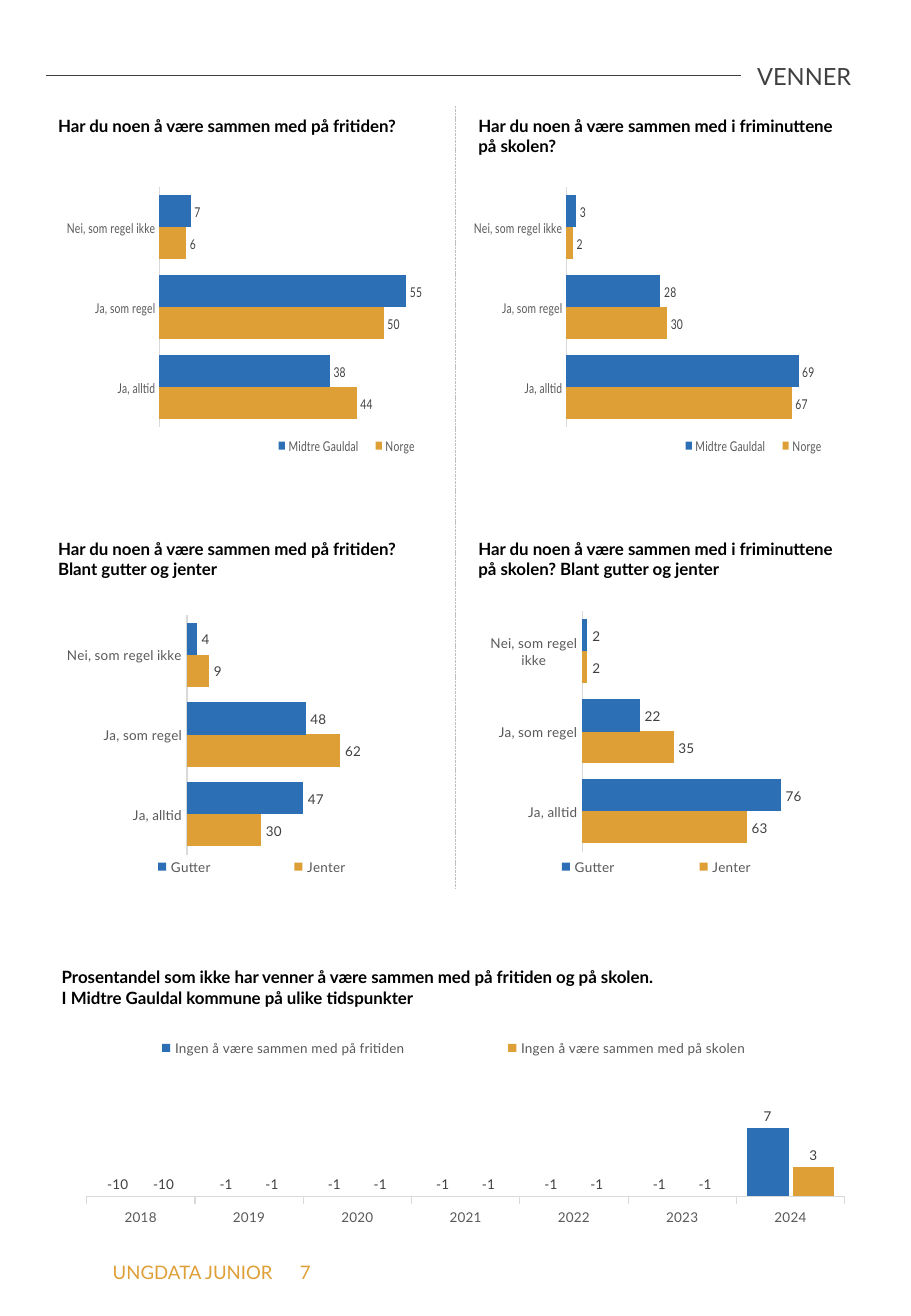
from dataclasses import dataclass

from lxml import etree
from pptx import Presentation
from pptx.chart.data import CategoryChartData
from pptx.dml.color import RGBColor
from pptx.enum import chart as chart_enum, dml, shapes, text
from pptx.oxml import ns
from pptx.util import Pt

EMU_PER_PX = 9144  # 100 px to the inch
FONT = "Lato"
COLORS = {
    "blue": "2C6FB4", "amber": "DE9F37", "black": "000000", "dark": "404040",
    "grey": "595959", "dotted": "BFBFBF", "axis": "D9D9D9",
}
ANSWERS = ("Ja, alltid", "Ja, som regel", "Nei, som regel ikke")
YEARS = tuple(str(year) for year in range(2018, 2025))
Box = tuple[int, int, int, int]
Layout = tuple[float, float, float, float]


@dataclass
class Series:
    name: str
    color: str
    values: tuple[int, ...]


@dataclass
class Panel:
    heading: tuple[str, ...]
    heading_box: Box
    chart_box: Box
    series: tuple[Series, Series]
    axis_max: float
    plot_layout: Layout
    legend_layout: Layout
    categories: tuple[str, ...] = ANSWERS
    upright: bool = False


@dataclass
class Rule:
    start: tuple[int, int]
    end: tuple[int, int]
    color: str
    width: float
    dash: dml.MSO_LINE = dml.MSO_LINE.SOLID


PANELS = (
    Panel(("Har du noen å være sammen med på fritiden?",),
          (38, 90, 315, 27), (55, 137, 298, 247),
          (Series("Norge", "amber", (44, 50, 6)),
           Series("Midtre Gauldal", "blue", (38, 55, 7))),
          60, (0.43, 0.07, 0.97, 0.8), (0.41, 0.88, 0.97, 0.1)),
    Panel(("Har du noen å være sammen med i friminuttene på skolen?",),
          (384, 90, 329, 44), (390, 137, 298, 247),
          (Series("Norge", "amber", (67, 30, 2)),
           Series("Midtre Gauldal", "blue", (69, 28, 3))),
          80, (0.43, 0.07, 0.97, 0.8), (0.41, 0.88, 0.97, 0.1)),
    Panel(("Har du noen å være sammen med på fritiden? Blant gutter og jenter",),
          (38, 438, 315, 44), (55, 486, 298, 247),
          (Series("Jenter", "amber", (30, 62, 9)),
           Series("Gutter", "blue", (47, 48, 4))),
          70, (0.33, 0.08, 0.48, 0.8), (0.03, 0.87, 0.96, 0.1)),
    Panel(("Har du noen å være sammen med i friminuttene på skolen? Blant gutter og jenter",),
          (384, 438, 315, 61), (390, 486, 298, 247),
          (Series("Jenter", "amber", (63, 35, 2)),
           Series("Gutter", "blue", (76, 22, 2))),
          90, (0.3, 0.07, 0.65, 0.8), (0.02, 0.87, 0.97, 0.1)),
    Panel(("Prosentandel som ikke har venner å være sammen med på fritiden og på skolen.",
           "I Midtre Gauldal kommune på ulike tidspunkter"),
          (41, 791, 642, 44), (52, 847, 644, 162),
          (Series("Ingen å være sammen med på fritiden", "blue", (-10, -1, -1, -1, -1, -1, 7)),
           Series("Ingen å være sammen med på skolen", "amber", (-10, -1, -1, -1, -1, -1, 3))),
          7.5, (0.03, 0.48, 0.97, 0.37), (0, 0.02, 1, 0.15), YEARS, True),
)
RULES = (
    Rule((375, 87), (375, 731), "dotted", 0.5, dml.MSO_LINE.SQUARE_DOT),
    Rule((38, 62), (610, 62), "dark", 0.3),
)


def px(length: int) -> int:
    return length * EMU_PER_PX


def rgb(name: str) -> RGBColor:
    return RGBColor.from_string(COLORS[name])


def style_font(font, size: float, color: str, bold: bool = False) -> None:
    font.name, font.size, font.bold = FONT, Pt(size), bold
    font.color.rgb = rgb(color)


def add_tabs(paragraph, stops: tuple[int, ...]) -> None:
    tab_list = etree.SubElement(paragraph._p.get_or_add_pPr(), ns.qn("a:tabLst"))
    for stop in stops:
        etree.SubElement(tab_list, ns.qn("a:tab"), pos=str(px(stop)), algn="l")


def write_text(shape, lines: tuple[str, ...], size: float, color: str, bold: bool = False,
               align=text.PP_ALIGN.LEFT, tabs: tuple[int, ...] = ()) -> None:
    frame = shape.text_frame
    frame.word_wrap = True
    frame.auto_size = text.MSO_AUTO_SIZE.NONE
    frame.vertical_anchor = text.MSO_ANCHOR.TOP
    frame.text = "\n".join(lines)
    for paragraph in frame.paragraphs:
        paragraph.alignment = align
        paragraph.line_spacing = 1.0
        if tabs:
            add_tabs(paragraph, tabs)
        style_font(paragraph.font, size, color, bold)


def add_text(slide, box: Box, lines: tuple[str, ...], size: float, color: str, **options) -> None:
    write_text(slide.shapes.add_textbox(*map(px, box)), lines, size, color, **options)


def add_title(slide) -> None:
    title = slide.shapes.title
    title.left, title.top, title.width, title.height = map(px, (38, 46, 673, 34))
    write_text(title, ("VENNER",), 14, "dark", align=text.PP_ALIGN.RIGHT)


def add_rule(slide, rule: Rule) -> None:
    line = slide.shapes.add_connector(
        shapes.MSO_CONNECTOR.STRAIGHT, *map(px, rule.start + rule.end))
    line.line.color.rgb = rgb(rule.color)
    line.line.width = Pt(rule.width)
    line.line.dash_style = rule.dash
    etree.SubElement(line._element.spPr, ns.qn("a:effectLst"))


def set_layout(element, index: int, layout: Layout, inner: bool = False) -> None:
    """Place a plot area or legend by fractions of its chart."""
    for old in element.findall(ns.qn("c:layout")):
        element.remove(old)
    holder = etree.Element(ns.qn("c:layout"))
    manual = etree.SubElement(holder, ns.qn("c:manualLayout"))
    settings = [("layoutTarget", "inner")] if inner else []
    settings += [("xMode", "edge"), ("yMode", "edge"), *zip("xywh", layout)]
    for tag, value in settings:
        etree.SubElement(manual, ns.qn(f"c:{tag}"), val=str(value))
    element.insert(index, holder)


def style_axes(chart, panel: Panel) -> None:
    category, value = chart.category_axis, chart.value_axis
    category.has_major_gridlines = value.has_major_gridlines = False
    category.major_tick_mark = (chart_enum.XL_TICK_MARK.OUTSIDE if panel.upright
                                else chart_enum.XL_TICK_MARK.NONE)
    category.minor_tick_mark = chart_enum.XL_TICK_MARK.NONE
    category.format.line.color.rgb = rgb("axis")
    category.format.line.width = Pt(0.75)
    style_font(category.tick_labels.font, 8, "grey")
    value.minimum_scale, value.maximum_scale = 0, panel.axis_max
    value.visible = False


def style_series(plot, panel: Panel) -> None:
    plot.gap_width = 50
    plot.vary_by_categories = False
    if panel.upright:
        plot.overlap = -10
    for series, details in zip(plot.series, panel.series):
        series.invert_if_negative = False
        series.format.fill.solid()
        series.format.fill.fore_color.rgb = rgb(details.color)
        labels = series.data_labels
        labels.show_value = True
        labels.number_format, labels.number_format_is_linked = "0", False
        labels.position = chart_enum.XL_LABEL_POSITION.OUTSIDE_END
        style_font(labels.font, 8, "dark")


def add_panel(slide, panel: Panel) -> None:
    add_text(slide, panel.heading_box, panel.heading, 10, "black", bold=True)
    data = CategoryChartData(number_format="0")
    data.categories = panel.categories
    for series in panel.series:
        data.add_series(series.name, series.values)
    kinds = chart_enum.XL_CHART_TYPE
    kind = kinds.COLUMN_CLUSTERED if panel.upright else kinds.BAR_CLUSTERED
    chart = slide.shapes.add_chart(kind, *map(px, panel.chart_box), data).chart
    chart.has_title = False
    style_font(chart.font, 8, "black")
    style_axes(chart, panel)
    style_series(chart.plots[0], panel)
    chart.has_legend = True
    chart.legend.position = chart_enum.XL_LEGEND_POSITION.TOP
    chart.legend.include_in_layout = False
    style_font(chart.legend.font, 8, "grey")
    set_layout(chart.legend._element, 1, panel.legend_layout)
    set_layout(chart._chartSpace.chart.plotArea, 0, panel.plot_layout, inner=True)


def main() -> None:
    presentation = Presentation()
    presentation.slide_width, presentation.slide_height = px(750), px(1083)
    slide = presentation.slides.add_slide(presentation.slide_layouts[5])
    add_title(slide)
    for rule in RULES:
        add_rule(slide, rule)
    for panel in PANELS:
        add_panel(slide, panel)
    add_text(slide, (33, 1033, 717, 29), ("\tUNGDATA JUNIOR\t7",), 11, "amber", tabs=(50, 204))
    presentation.save("out.pptx")


if __name__ == "__main__":
    main()
